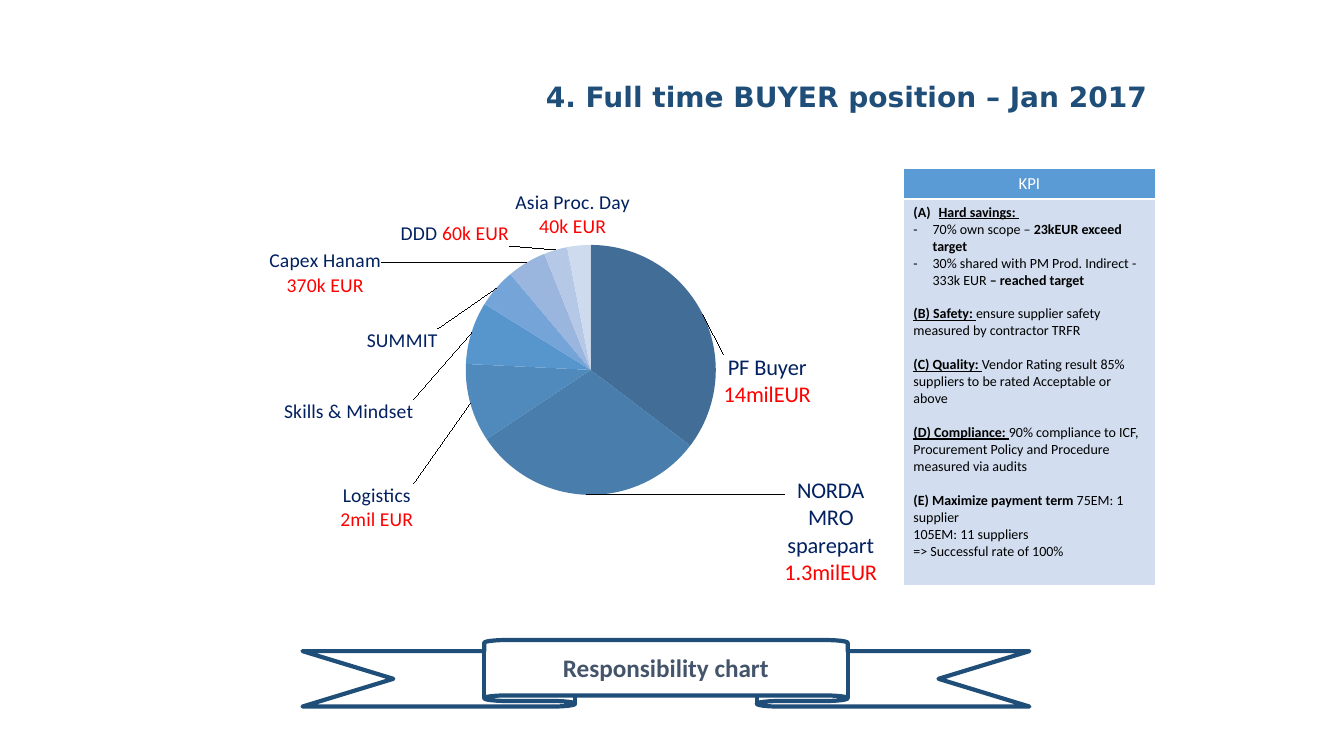
from dataclasses import dataclass
from math import cos, radians, sin

from lxml.etree import SubElement
from pptx import Presentation
from pptx.chart.data import CategoryChartData
from pptx.dml.color import RGBColor
from pptx.enum.chart import XL_CHART_TYPE, XL_LABEL_POSITION
from pptx.enum.shapes import MSO_SHAPE
from pptx.enum.text import MSO_ANCHOR, MSO_AUTO_SIZE, PP_ALIGN
from pptx.oxml import parse_xml
from pptx.oxml.ns import nsdecls, qn
from pptx.util import Inches, Pt

COLORS = {
    "title": "1F4E79", "banner": "44546A", "label": "002060", "amount": "FF0000",
    "header": "5B9BD5", "body": "D2DEEF", "white": "FFFFFF", "black": "000000",
}
BODY_FONT = "Calibri"
CHART_LEFT, CHART_TOP, CHART_WIDTH, CHART_HEIGHT = 2.17, 1.75, 6.92, 4.44
PIE_X, PIE_Y, PIE_RADIUS = 5.86, 3.67, 1.24
LABEL_GAP = 0.06


@dataclass(frozen=True)
class Span:
    text: str
    bold: bool = False
    underline: bool = False


@dataclass(frozen=True)
class Line:
    spans: tuple[Span, ...]
    bullet: str = ""
    indent: float = 0
    space_before: float = 0


@dataclass(frozen=True)
class Slice:
    name_lines: tuple[str, ...]
    amount: str
    value: int
    color: str
    x: float
    y: float
    size: int = 14
    inline: bool = False


SLICES = (
    Slice(("PF Buyer",), "14milEUR", 35, "416D96", 7.18, 4.06, 16),
    Slice(("NORDA", "MRO", "sparepart"), "1.3milEUR", 30, "497DAC", 8.24, 4.74, 16),
    Slice(("Logistics",), "2mil EUR", 10, "508ABD", 4.10, 4.80),
    Slice(("Skills & Mindset",), "", 8, "5796CC", 4.10, 4.20),
    Slice(("SUMMIT",), "", 5, "74A4D8", 4.34, 3.50),
    Slice(("Capex Hanam",), "370k EUR", 5, "9AB6DF", 3.78, 2.95),
    Slice(("DDD ",), "60k EUR", 3, "B5C8E6", 5.05, 2.44, inline=True),
    Slice(("Asia Proc. Day",), "40k EUR", 3, "CEDAEE", 6.25, 2.37),
)


def topic(heading: str, text: str, underline: bool = True) -> Line:
    return Line((Span(heading, True, underline), Span(text)), space_before=12)


KPI_LINES = (
    Line((Span("Hard savings: ", True, True),), "alphaUcParenBoth", 0.25),
    Line((Span("70% own scope – "), Span("23kEUR exceed target", True)), "-", 0.19),
    Line((Span("30% shared with PM Prod. Indirect - 333k EUR "),
          Span("– reached target", True)), "-", 0.19),
    topic("(B) Safety: ", "ensure supplier safety measured by contractor TRFR"),
    topic("(C) Quality: ", "Vendor Rating result 85% suppliers to be rated Acceptable or above"),
    topic("(D) Compliance: ",
          "90% compliance to ICF, Procurement Policy and Procedure measured via audits"),
    topic("(E) Maximize payment term ", "75EM: 1 supplier", False),
    Line((Span("105EM: 11 suppliers"),)),
    Line((Span("=> Successful rate of 100%"),)),
)


def color(name: str) -> RGBColor:
    return RGBColor.from_string(COLORS[name])


def add_span(paragraph, text: str, size: float, color_name: str, bold: bool = False,
             underline: bool = False, font: str = BODY_FONT) -> None:
    span = paragraph.add_run()
    span.text = text
    span.font.size = Pt(size)
    span.font.name = font
    span.font.bold = bold
    span.font.underline = underline
    span.font.color.rgb = color(color_name)


def manual_layout(content: str):
    return parse_xml(f"<c:layout {nsdecls('c')}><c:manualLayout>{content}"
                     "</c:manualLayout></c:layout>")


def layout_values(**values: float) -> str:
    return "".join(f'<c:{name} val="{value:.4f}"/>' for name, value in values.items())


def place_pie(chart) -> None:
    plot_area = chart._chartSpace.chart.plotArea
    for old_layout in plot_area.findall(qn("c:layout")):
        plot_area.remove(old_layout)
    modes = '<c:layoutTarget val="inner"/><c:xMode val="edge"/><c:yMode val="edge"/>'
    plot_area.insert(0, manual_layout(modes + layout_values(
        x=(PIE_X - PIE_RADIUS - CHART_LEFT) / CHART_WIDTH,
        y=(PIE_Y - PIE_RADIUS - CHART_TOP) / CHART_HEIGHT,
        w=2 * PIE_RADIUS / CHART_WIDTH,
        h=2 * PIE_RADIUS / CHART_HEIGHT)))


def add_slice_label(point, part: Slice, middle: float) -> None:
    """Write the label and shift it from its spot outside the slice's middle angle."""
    label = point.data_label
    frame = label.text_frame
    for index, name in enumerate(part.name_lines):
        paragraph = frame.add_paragraph() if index else frame.paragraphs[0]
        add_span(paragraph, name, part.size, "label")
    if part.amount:
        paragraph = paragraph if part.inline else frame.add_paragraph()
        add_span(paragraph, part.amount, part.size, "amount")
    label.position = XL_LABEL_POSITION.BEST_FIT
    reach = PIE_RADIUS + LABEL_GAP
    shift = layout_values(
        x=(part.x - PIE_X - reach * sin(middle)) / CHART_WIDTH,
        y=(part.y - PIE_Y + reach * cos(middle)) / CHART_HEIGHT)
    label._dLbl.find(qn("c:idx")).addnext(manual_layout(shift))


def add_pie(page) -> None:
    data = CategoryChartData()
    data.categories = [" ".join(part.name_lines).strip() for part in SLICES]
    data.add_series("Series 1", [part.value for part in SLICES])
    chart = page.shapes.add_chart(
        XL_CHART_TYPE.PIE, Inches(CHART_LEFT), Inches(CHART_TOP),
        Inches(CHART_WIDTH), Inches(CHART_HEIGHT), data).chart
    chart.has_legend = False
    chart.has_title = False
    chart.font.name = BODY_FONT
    chart.font.size = Pt(14)
    chart.font.color.rgb = color("label")
    place_pie(chart)
    series = chart.plots[0].series[0]
    series.data_labels.show_category_name = True
    series.data_labels.show_value = False
    total = sum(part.value for part in SLICES)
    passed = 0
    for index, part in enumerate(SLICES):
        point = series.points[index]
        point.format.fill.solid()
        point.format.fill.fore_color.rgb = RGBColor.from_string(part.color)
        point.format.line.fill.background()
        add_slice_label(point, part, radians(360 * (passed + part.value / 2) / total))
        passed += part.value


def style_cell(cell, fill: str) -> None:
    properties = cell._tc.get_or_add_tcPr()
    for side in ("lnL", "lnR", "lnT", "lnB"):
        border = SubElement(properties, qn(f"a:{side}"), w=str(Pt(1)))
        border_fill = SubElement(border, qn("a:solidFill"))
        SubElement(border_fill, qn("a:srgbClr"), val=COLORS["white"])
    cell.fill.solid()
    cell.fill.fore_color.rgb = color(fill)


def add_bullet(paragraph, bullet: str, indent: float) -> None:
    properties = paragraph._p.get_or_add_pPr()
    properties.set("marL", str(Inches(indent)))
    properties.set("indent", str(-Inches(indent)))
    SubElement(properties, qn("a:buFont"), typeface=BODY_FONT)
    if bullet == "-":
        SubElement(properties, qn("a:buChar"), char=bullet)
    else:
        SubElement(properties, qn("a:buAutoNum"), type=bullet)


def add_kpi_table(page) -> None:
    table = page.shapes.add_table(
        2, 1, Inches(8.96), Inches(1.67), Inches(2.5), Inches(4.13)).table
    table.first_row = table.horz_banding = False
    table.rows[0].height, table.rows[1].height = Inches(0.29), Inches(3.84)
    header, body = table.cell(0, 0), table.cell(1, 0)
    style_cell(header, "header")
    style_cell(body, "body")
    heading = header.text_frame.paragraphs[0]
    heading.alignment = PP_ALIGN.CENTER
    add_span(heading, "KPI", 12, "white")
    for index, line in enumerate(KPI_LINES):
        paragraph = body.text_frame.add_paragraph() if index else body.text_frame.paragraphs[0]
        if line.space_before:
            paragraph.space_before = Pt(line.space_before)
        if line.bullet:
            add_bullet(paragraph, line.bullet, line.indent)
        for span in line.spans:
            add_span(paragraph, span.text, 10, "black", span.bold, span.underline)


def add_title(page) -> None:
    title = page.shapes.title
    title.left, title.top, title.width, title.height = map(Inches, (4.04, 0.43, 7.34, 0.69))
    frame = title.text_frame
    frame.margin_left = frame.margin_top = frame.margin_right = frame.margin_bottom = 0
    frame.vertical_anchor = MSO_ANCHOR.BOTTOM
    frame.auto_size = MSO_AUTO_SIZE.NONE
    frame.paragraphs[0].alignment = PP_ALIGN.RIGHT
    add_span(frame.paragraphs[0], "4. Full time BUYER position – Jan 2017", 20, "title",
             bold=True, font="DejaVu Sans")


def add_banner(page) -> None:
    banner = page.shapes.add_shape(
        MSO_SHAPE.UP_RIBBON, Inches(3), Inches(6.35), Inches(7.21), Inches(0.66))
    banner.shadow.inherit = False
    banner.fill.background()
    banner.line.color.rgb = color("title")
    banner.line.width = Pt(3)
    banner.text_frame.vertical_anchor = MSO_ANCHOR.MIDDLE
    paragraph = banner.text_frame.paragraphs[0]
    paragraph.alignment = PP_ALIGN.CENTER
    add_span(paragraph, "Responsibility chart", 18, "banner", bold=True)


def main() -> None:
    deck = Presentation()
    deck.slide_width, deck.slide_height = Inches(13.33), Inches(7.5)
    page = deck.slides.add_slide(deck.slide_layouts[5])
    add_pie(page)
    add_title(page)
    add_banner(page)
    add_kpi_table(page)
    deck.save("out.pptx")


if __name__ == "__main__":
    main()
